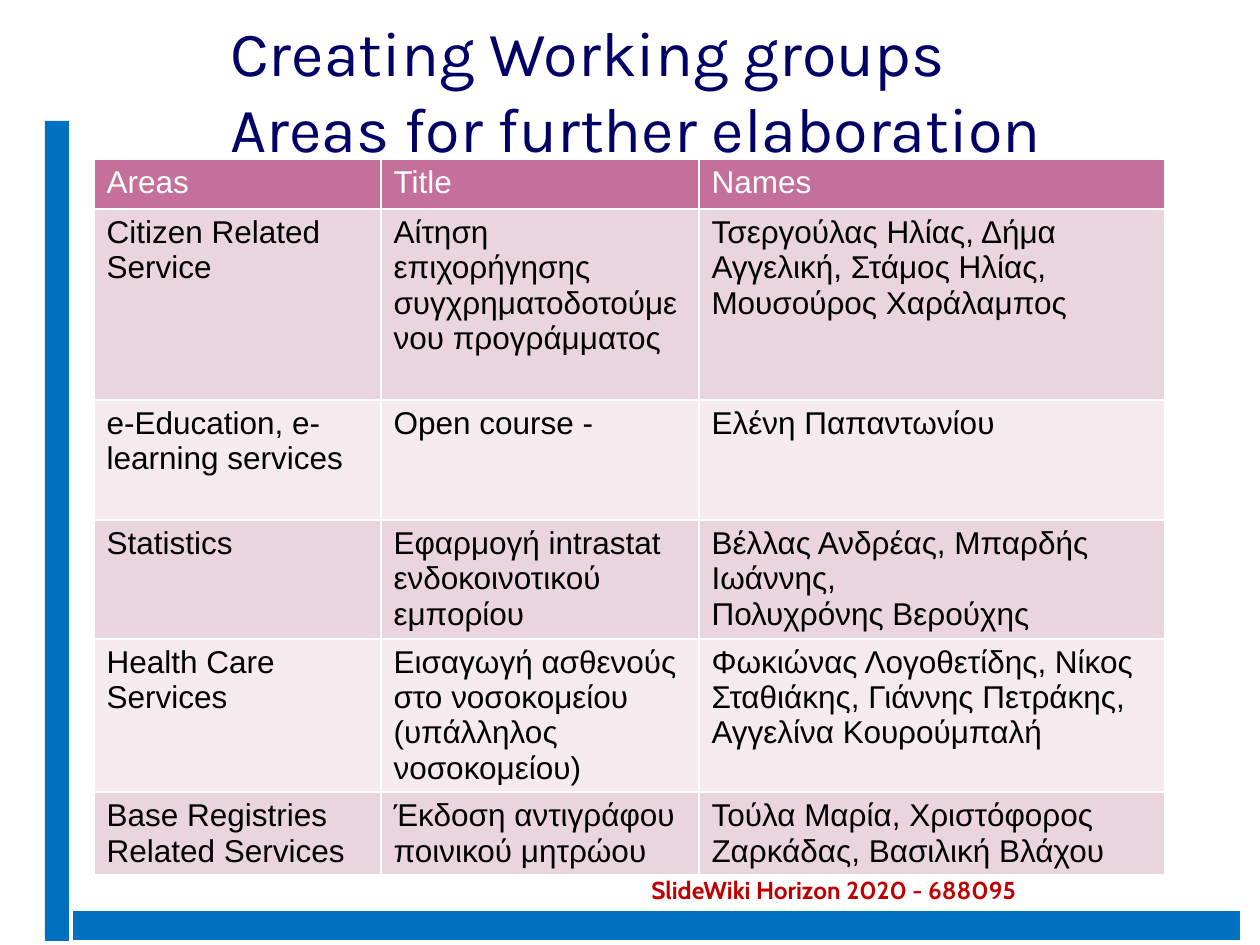
from lxml.etree import SubElement
from pptx import Presentation
from pptx.dml.color import RGBColor
from pptx.enum.shapes import MSO_SHAPE
from pptx.enum.text import MSO_ANCHOR
from pptx.oxml.ns import qn
from pptx.util import Pt

PX = 914400 / 126


def px(*values):
    return [round(v * PX) for v in values]


def write(tf, text, size=18, font="Arial", color="000000", bold=False, spacing=None):
    tf.word_wrap = True
    for i, line in enumerate(text.split("\n")):
        p = tf.add_paragraph() if i else tf.paragraphs[0]
        p.line_spacing = spacing
        r = p.add_run()
        r.text = line
        r.font.size = Pt(size)
        r.font.name = font
        r.font.bold = bold
        r.font.color.rgb = RGBColor.from_string(color)


prs = Presentation()
prs.slide_width, prs.slide_height = px(1260, 945)
s = prs.slides.add_slide(prs.slide_layouts[6])

for box in [(45, 121, 24, 820), (73, 911, 1167, 29)]:
    sp = s.shapes.add_shape(MSO_SHAPE.RECTANGLE, *px(*box))
    sp.shadow.inherit = False
    sp.fill.solid()
    sp.fill.fore_color.rgb = RGBColor.from_string("0070C0")
    sp.line.fill.background()

title = s.shapes.add_textbox(*px(218, 30, 844, 141))
title.text_frame.vertical_anchor = MSO_ANCHOR.BOTTOM
write(title.text_frame, "Creating Working groups\nAreas for further elaboration",
      size=36, font="Karla", color="000066")

rows = [
    ("Areas", "Title", "Names"),
    ("Citizen Related Service",
     "Αίτηση επιχορήγησης συγχρηματοδοτούμενου προγράμματος",
     "Τσεργούλας Ηλίας, Δήμα Αγγελική, Στάμος Ηλίας, Μουσούρος Χαράλαμπος"),
    ("e-Education, e-learning services", "Open course -", "Ελένη Παπαντωνίου"),
    ("Statistics", "Εφαρμογή intrastat ενδοκοινοτικού εμπορίου",
     "Βέλλας Ανδρέας, Μπαρδής Ιωάννης,\nΠολυχρόνης Βερούχης"),
    ("Health Care Services",
     "Εισαγωγή ασθενούς στο νοσοκομείου (υπάλληλος νοσοκομείου)",
     "Φωκιώνας Λογοθετίδης, Νίκος Σταθιάκης, Γιάννης Πετράκης, Αγγελίνα Κουρούμπαλή"),
    ("Base Registries Related Services", "Έκδοση αντιγράφου ποινικού μητρώου",
     "Τούλα Μαρία, Χριστόφορος Ζαρκάδας, Βασιλική Βλάχου"),
]
widths = px(287, 318, 466)
heights = px(50, 191, 120, 119, 153, 83)
table = s.shapes.add_table(len(rows), len(widths), *px(94, 159),
                           sum(widths), sum(heights)).table
for column, width in zip(table.columns, widths):
    column.width = width

for i, (row, height) in enumerate(zip(rows, heights)):
    table.rows[i].height = height
    fill = "C4709A" if i == 0 else ("F5EBEF", "EAD5DE")[i % 2]
    for j, text in enumerate(row):
        cell = table.cell(i, j)
        write(cell.text_frame, text, color="000000" if i else "FFFFFF", spacing=Pt(20.1))
        tc_pr = cell._tc.get_or_add_tcPr()
        for side in ("lnL", "lnR", "lnT", "lnB"):
            ln = SubElement(tc_pr, qn("a:" + side), w=str(Pt(1)))
            SubElement(SubElement(ln, qn("a:solidFill")), qn("a:srgbClr"), val="FFFFFF")
        cell.fill.solid()
        cell.fill.fore_color.rgb = RGBColor.from_string(fill)

footer = s.shapes.add_textbox(*px(639, 869, 529, 43))
write(footer.text_frame, "SlideWiki Horizon 2020 - 688095",
      size=14, font="Cabin", color="C00000", bold=True)

prs.save("out.pptx")
